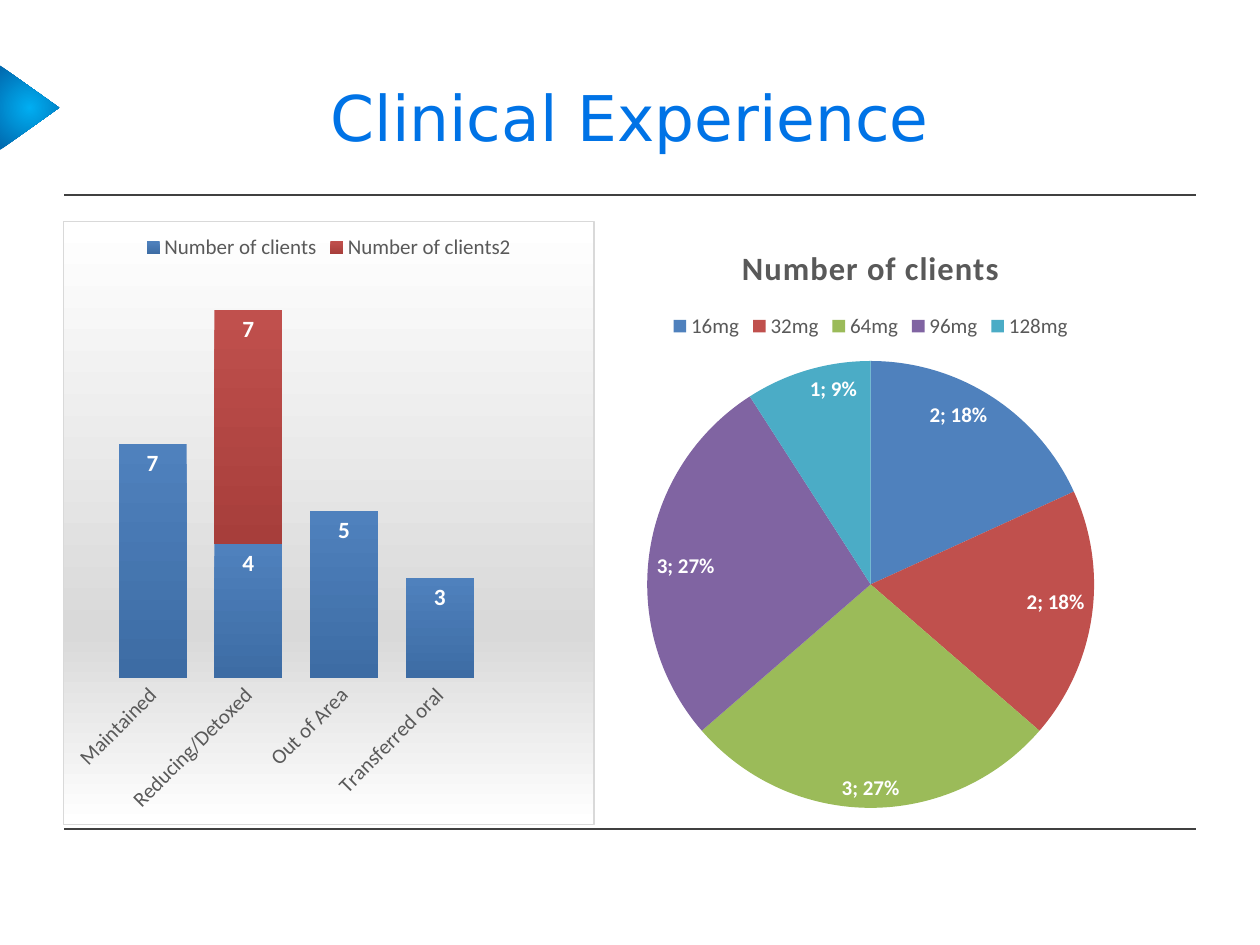
from dataclasses import dataclass

from lxml import etree
from pptx import Presentation
from pptx.chart.data import CategoryChartData
from pptx.dml.color import RGBColor
from pptx.enum import chart as ch, shapes, text
from pptx.oxml import parse_xml
from pptx.oxml.ns import nsdecls, qn
from pptx.util import Emu, Pt

PX = 9144  # 100 px to the inch


@dataclass(frozen=True)
class Theme:
    title_font: str = "DejaVu Sans"
    chart_font: str = "Calibri"
    title: str = "0073E6"
    rule: str = "404040"
    muted: str = "595959"
    border: str = "D9D9D9"
    white: str = "FFFFFF"
    marker: tuple = ((0, "00AEF2"), (100, "0067AC"))
    panel: tuple = ((0, "FFFFFF"), (68, "D9D9D9"), (100, "FFFFFF"))
    bars: tuple = (((0, "4F81BD"), (100, "3D6CA4")),
                   ((0, "C0504D"), (100, "A73E3B")))
    slices: tuple = ("4F81BD", "C0504D", "9BBB59", "8064A2", "4BACC6")
    title_size: float = 36
    chart_title_size: float = 18.6
    bar_label_size: float = 13.3
    text_size: float = 12


T = Theme()


def px(*lengths):
    return [Emu(n * PX) for n in lengths]


def set_font(font, size, color, name=T.chart_font, bold=False):
    font.size, font.name, font.bold = Pt(size), name, bold
    font.color.rgb = RGBColor.from_string(color)


def add_gradient(sp_pr, stops, direction='<a:lin ang="5400000" scaled="0"/>'):
    gs = "".join(f'<a:gs pos="{pos * 1000}"><a:srgbClr val="{color}"/></a:gs>'
                 for pos, color in stops)
    sp_pr.append(parse_xml(f'<a:gradFill {nsdecls("a")} rotWithShape="1">'
                           f'<a:gsLst>{gs}</a:gsLst>{direction}</a:gradFill>'))


def add_text(slide, box, content, *, size, color, name, align):
    tf = slide.shapes.add_textbox(*px(*box)).text_frame
    tf.word_wrap = True
    tf.vertical_anchor = text.MSO_ANCHOR.MIDDLE
    p = tf.paragraphs[0]
    p.alignment = align
    r = p.add_run()
    r.text = content
    set_font(r.font, size, color, name)


def add_rule(slide, x, y, width):
    line = slide.shapes.add_connector(shapes.MSO_CONNECTOR.STRAIGHT,
                                      *px(x, y, x + width, y))
    line.line.width = Pt(1)
    line.line.color.rgb = RGBColor.from_string(T.rule)
    etree.SubElement(line._element.spPr, qn("a:effectLst"))


def add_marker(slide, box):
    """Triangle pointing right from the slide edge."""
    sp = slide.shapes.add_shape(shapes.MSO_SHAPE.ISOSCELES_TRIANGLE, *px(*box))
    sp.rotation = 90
    add_gradient(sp._element.spPr, T.marker,
                 '<a:path path="circle"><a:fillToRect l="50000" t="50000" '
                 'r="50000" b="50000"/></a:path>')
    sp.line.fill.background()
    sp.shadow.inherit = False


def add_header(slide, box):
    x, y, width, height = box
    add_marker(slide, (x - 60, y + 32, 67, 47))
    add_text(slide, box, "Clinical Experience", size=T.title_size,
             color=T.title, name=T.title_font, align=text.PP_ALIGN.CENTER)
    add_rule(slide, x + 1, y + height, width - 2)


def add_chart(slide, box, kind, categories, series):
    data = CategoryChartData()
    data.categories = categories
    for name, values in series:
        data.add_series(name, values)
    chart = slide.shapes.add_chart(kind, *px(*box), data).chart
    set_font(chart.font, 10, "000000")
    chart.has_legend = True
    chart.legend.position = ch.XL_LEGEND_POSITION.TOP
    chart.legend.include_in_layout = False
    set_font(chart.legend.font, T.text_size, T.muted)
    return chart


def add_labels(series, size):
    labels = series.data_labels
    labels.show_value = True
    labels.position = ch.XL_LABEL_POSITION.INSIDE_END
    set_font(labels.font, size, T.white, bold=True)
    return labels


def add_outcome_bars(slide, box):
    chart = add_chart(
        slide, box, ch.XL_CHART_TYPE.COLUMN_STACKED,
        ["Maintained", "Reducing/Detoxed", "Out of Area", "Transferred oral", ""],
        [("Number of clients", (7, 4, 5, 3, None)),
         ("Number of clients2", (None, 7, None, None, None))])
    chart.has_title = False

    # Shaded panel behind the chart
    panel = parse_xml(f'<c:spPr {nsdecls("c", "a")}/>')
    add_gradient(panel, T.panel)
    panel.append(parse_xml(
        f'<a:ln {nsdecls("a")} w="9525"><a:solidFill>'
        f'<a:srgbClr val="{T.border}"/></a:solidFill></a:ln>'))
    chart._chartSpace.chart.addnext(panel)

    # Axes
    chart.value_axis.visible = False
    chart.value_axis.has_major_gridlines = False
    chart.value_axis.minimum_scale, chart.value_axis.maximum_scale = 0, 12
    axis = chart.category_axis
    axis.major_tick_mark = ch.XL_TICK_MARK.NONE
    axis.format.line.fill.background()
    set_font(axis.tick_labels.font, T.text_size, T.muted)
    axis._element.txPr.bodyPr.set("rot", "-2700000")

    # Bars
    plot = chart.plots[0]
    plot.gap_width, plot.overlap = 41, 100
    for series, stops in zip(plot.series, T.bars):
        add_gradient(series._element.get_or_add_spPr(), stops)
        add_labels(series, T.bar_label_size)


def add_dose_pie(slide, box):
    chart = add_chart(slide, box, ch.XL_CHART_TYPE.PIE,
                      ["16mg", "32mg", "64mg", "96mg", "128mg"],
                      [("Number of clients", (2, 2, 3, 3, 1))])
    chart.has_title = True
    p = chart.chart_title.text_frame.paragraphs[0]
    r = p.add_run()
    r.text = "Number of clients"
    set_font(r.font, T.chart_title_size, T.muted, bold=True)
    r.font._element.set("spc", "50")

    # Slices
    chart.plots[0].vary_by_categories = True
    series = chart.plots[0].series[0]
    for i, color in enumerate(T.slices):
        fill = series.points[i].format.fill
        fill.solid()
        fill.fore_color.rgb = RGBColor.from_string(color)
    labels = add_labels(series, T.text_size)
    labels.show_percentage = True
    separator = parse_xml(f'<c:separator {nsdecls("c")}>; </c:separator>')
    labels._element.find(qn("c:showBubbleSize")).addnext(separator)


def main():
    prs = Presentation()
    prs.slide_width, prs.slide_height = px(1000, 750)
    slide = prs.slides.add_slide(prs.slide_layouts[6])
    left, width = 50, 900
    chart_top, chart_w, chart_h, gap = 175, 422, 480, 8

    add_header(slide, (left, 30, width, 125))
    add_rule(slide, left + 1, 658, width - 2)
    add_dose_pie(slide, (left + chart_w + gap, chart_top, chart_w, chart_h))
    add_outcome_bars(slide, (left, chart_top, chart_w, chart_h))
    prs.save("out.pptx")


if __name__ == "__main__":
    main()
